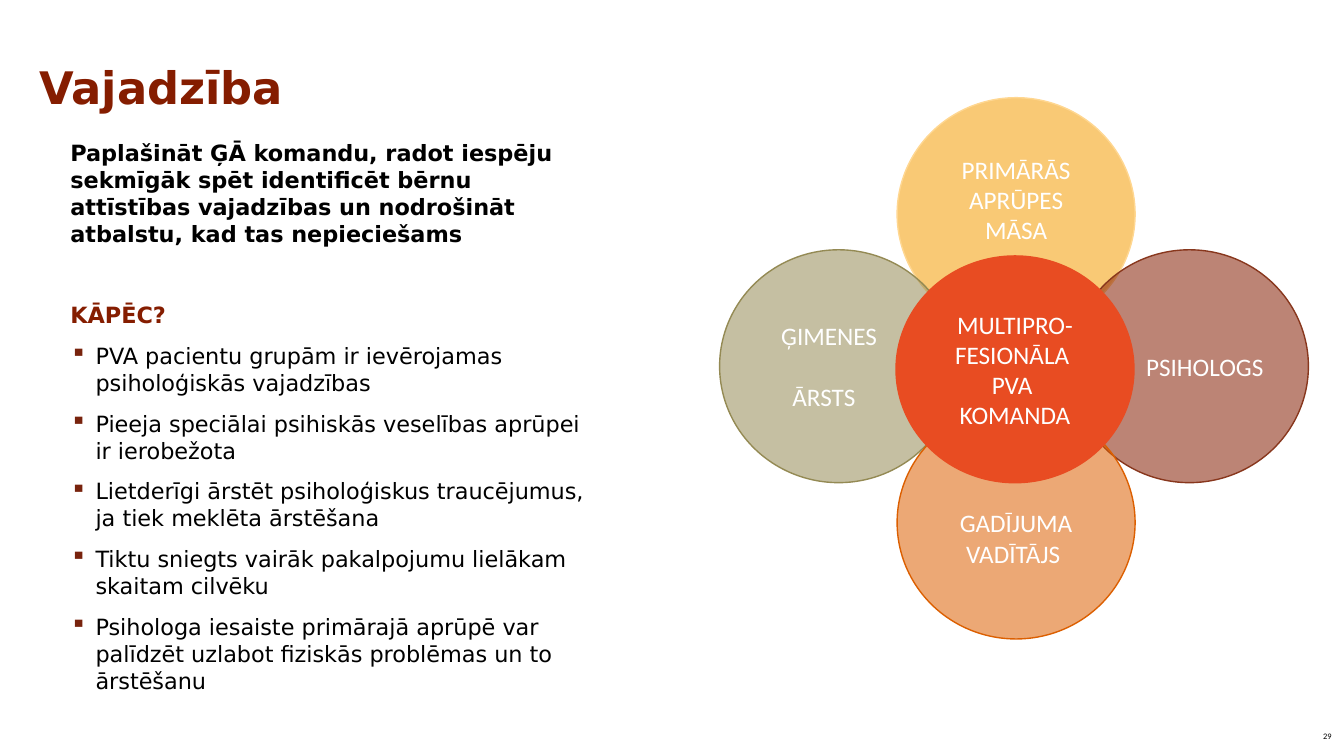
"""Builds the slide on the need for a wider multiprofessional care team."""
import lxml.etree
import pptx
import pptx.dml.color
import pptx.enum.shapes
import pptx.enum.text
import pptx.oxml.ns
import pptx.util

Pt = pptx.util.Pt
ALIGN = pptx.enum.text.PP_ALIGN
ANCHOR = pptx.enum.text.MSO_ANCHOR
qn = pptx.oxml.ns.qn

HEADING_FONT = "DejaVu Sans"
LABEL_FONT = "Calibri"
COLORS = {
    "heading": "851D00", "text": "000000", "label": "FFFFFF", "bullet": "78230D",
    "nurse": "F49D00", "nurse_line": "FFD791",
    "psychologist": "851D00", "psychologist_line": "88371D",
    "doctor": "948A54", "manager": "DC5F00", "team": "E84C22",
}
GOAL = ("Paplašināt ĢĀ komandu, radot iespēju sekmīgāk spēt identificēt bērnu "
        "attīstības vajadzības un nodrošināt atbalstu, kad tas nepieciešams")
REASONS = [
    "PVA pacientu grupām ir ievērojamas psiholoģiskās vajadzības",
    "Pieeja speciālai psihiskās veselības aprūpei ir ierobežota",
    "Lietderīgi ārstēt psiholoģiskus traucējumus, ja tiek meklēta ārstēšana",
    "Tiktu sniegts vairāk pakalpojumu lielākam skaitam cilvēku",
    "Psihologa iesaiste primārajā aprūpē var palīdzēt uzlabot fiziskās problēmas un to ārstēšanu",
]


def rgb(name):
    """Return the named colour."""
    return pptx.dml.color.RGBColor.from_string(COLORS[name])


def add_paragraph(frame, text, size, font, color, bold=False, align=ALIGN.LEFT):
    """Write text in the first empty paragraph of the frame or in a new one."""
    first = frame.paragraphs[0]
    paragraph = frame.add_paragraph() if first.runs else first
    paragraph.add_run().text = text
    paragraph.alignment = align
    paragraph.font.size = Pt(size)
    paragraph.font.name = font
    paragraph.font.bold = bold
    paragraph.font.color.rgb = rgb(color)
    return paragraph


def add_text_box(slide, box):
    """Add a wrapping text box and return its text frame."""
    frame = slide.shapes.add_textbox(*map(Pt, box)).text_frame
    frame.word_wrap = True
    return frame


def add_bullet(paragraph):
    """Give the paragraph a square bullet with a hanging indent."""
    properties = paragraph._p.get_or_add_pPr()
    properties.set("marL", str(Pt(18)))
    properties.set("indent", str(-Pt(18)))
    bullet_color = lxml.etree.SubElement(properties, qn("a:buClr"))
    lxml.etree.SubElement(bullet_color, qn("a:srgbClr"), val=COLORS["bullet"])
    lxml.etree.SubElement(properties, qn("a:buChar"), char="▪")


def add_title(slide, box):
    """Add the slide title."""
    frame = add_text_box(slide, box)
    paragraph = add_paragraph(frame, "Vajadzība", 32, HEADING_FONT, "heading", True)
    paragraph.line_spacing = 0.9


def add_reasons(slide, box):
    """Add the goal, the question and the bulleted reasons."""
    frame = add_text_box(slide, box)
    add_paragraph(frame, GOAL, 16, HEADING_FONT, "text", True)
    question = add_paragraph(frame, "KĀPĒC?", 16, HEADING_FONT, "heading", True)
    question.space_before = Pt(39)
    for reason in REASONS:
        paragraph = add_paragraph(frame, reason, 16, HEADING_FONT, "text")
        paragraph.space_before = Pt(10)
        add_bullet(paragraph)


def add_circle(slide, box, fill, line, lines, align=ALIGN.CENTER, opacity=54):
    """Add one labelled circle and return its text frame."""
    shape = slide.shapes.add_shape(pptx.enum.shapes.MSO_SHAPE.OVAL, *map(Pt, box))
    shape.shadow.inherit = False
    shape.fill.solid()
    shape.fill.fore_color.rgb = rgb(fill)
    if opacity < 100:
        color = shape._element.spPr.find(qn("a:solidFill"))[0]
        lxml.etree.SubElement(color, qn("a:alpha"), val=str(opacity * 1000))
    shape.line.color.rgb = rgb(line)
    shape.line.width = Pt(1)
    frame = shape.text_frame
    frame.word_wrap = True
    frame.vertical_anchor = ANCHOR.MIDDLE
    for text in lines:
        add_paragraph(frame, text, 18, LABEL_FONT, "label", align=align)
    return frame


def add_team(slide, box):
    """Add four role circles at the edges of the box around the team circle."""
    left, top, width, height = box
    circle_width, circle_height, core_height = 170, 166.3, 162
    center = left + (width - circle_width) / 2
    middle = top + (height - circle_height) / 2 - 1.5
    right = left + width - circle_width
    bottom = top + height - circle_height
    size = (circle_width, circle_height)

    nurse = add_circle(slide, (center + 1.5, top, *size), "nurse", "nurse_line",
                       ["PRIMĀRĀS APRŪPES MĀSA"])
    nurse.vertical_anchor = ANCHOR.TOP
    nurse.margin_top = Pt(15.8)
    add_circle(slide, (right, middle, *size), "psychologist", "psychologist_line",
               ["PSIHOLOGS"], ALIGN.RIGHT)
    doctor = add_circle(slide, (left, middle, *size), "doctor", "doctor",
                        ["ĢIMENES", "ĀRSTS"], ALIGN.LEFT)
    for paragraph, indent in zip(doctor.paragraphs, (12, 20)):
        paragraph._p.get_or_add_pPr().set("marL", str(Pt(indent)))
    doctor.paragraphs[1].space_before = Pt(22)
    manager = add_circle(slide, (center + 1.5, bottom, *size), "manager", "manager",
                         ["GADĪJUMA", "VADĪTĀJS "])
    manager.margin_top = Pt(25.6)
    core_top = top + (height - core_height) / 2 + 0.7
    add_circle(slide, (center + 0.7, core_top, circle_width, core_height), "team", "team",
               ["MULTIPRO-FESIONĀLA ", "PVA ", "KOMANDA"], opacity=100)


def add_slide_number(slide, box):
    """Add the slide number."""
    frame = add_text_box(slide, box)
    frame.vertical_anchor = ANCHOR.MIDDLE
    add_paragraph(frame, "29", 6, LABEL_FONT, "text", align=ALIGN.CENTER)


def main():
    """Build and save the presentation."""
    presentation = pptx.Presentation()
    presentation.slide_width = Pt(960)
    presentation.slide_height = Pt(540)
    slide = presentation.slides.add_slide(presentation.slide_layouts[6])
    add_title(slide, (21, 43.2, 828, 104.4))
    add_reasons(slide, (43.2, 95.8, 391, 406))
    add_team(slide, (514, 69.8, 420.6, 386.6))
    add_slide_number(slide, (936.7, 511.2, 23, 28.8))
    presentation.save("out.pptx")


if __name__ == "__main__":
    main()
